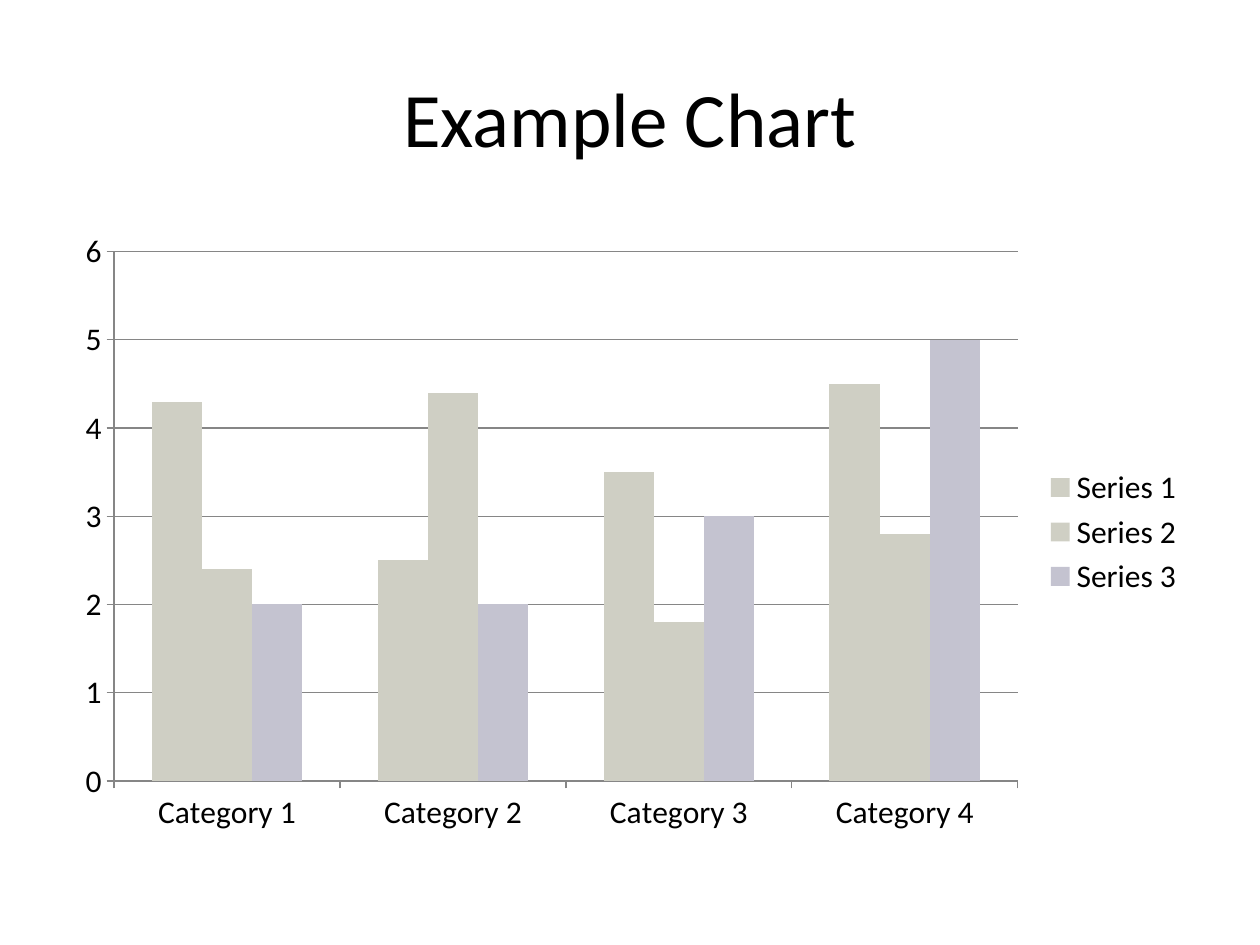
from pptx import Presentation
from pptx.chart.data import CategoryChartData
from pptx.dml.color import RGBColor
from pptx.enum.chart import XL_CHART_TYPE as ChartType, XL_LEGEND_POSITION as LegendPos
from pptx.enum.chart import XL_TICK_MARK as Tick
from pptx.enum.text import MSO_ANCHOR as Anchor, PP_ALIGN as Align
from pptx.util import Pt

# Content
TITLE = "Example Chart"
CATEGORIES = ["Category 1", "Category 2", "Category 3", "Category 4"]
SERIES = [
    ("Series 1", (4.3, 2.5, 3.5, 4.5), "CFCFC4"),
    ("Series 2", (2.4, 4.4, 1.8, 2.8), "CFCFC4"),
    ("Series 3", (2, 2, 3, 5), "C4C3D0"),
]

# Layout in px, 126 to the inch
SLIDE_W, SLIDE_H = 1260, 945
MARGIN = 63
TITLE_TOP, TITLE_H = 38, 157
CHART_TOP, CHART_H = 220, 624
FONT, BLACK, AXIS_GREY = "Calibri", "000000", "868686"


def px(length):
    return round(length * 914400 / 126)


def rgb(code):
    return RGBColor.from_string(code)


def set_font(font, size, color=BLACK):
    font.name, font.size = FONT, Pt(size)
    font.color.rgb = rgb(color)


def add_text(slide, text, box, size, align=Align.CENTER, anchor=Anchor.MIDDLE):
    frame = slide.shapes.add_textbox(*map(px, box)).text_frame
    frame.word_wrap = True
    frame.vertical_anchor = anchor
    paragraph = frame.paragraphs[0]
    paragraph.alignment = align
    run = paragraph.add_run()
    run.text = text
    set_font(run.font, size)


def style_line(line):
    line.color.rgb = rgb(AXIS_GREY)
    line.width = Pt(0.75)


def add_columns(slide, box):
    data = CategoryChartData()
    data.categories = CATEGORIES
    for name, values, _ in SERIES:
        data.add_series(name, values)
    chart = slide.shapes.add_chart(ChartType.COLUMN_CLUSTERED, *map(px, box), data).chart
    chart.has_title = False
    set_font(chart.font, 18)

    # Columns
    plot = chart.plots[0]
    plot.gap_width, plot.overlap = 150, 0
    plot.vary_by_categories = False
    for series, (_, _, color) in zip(plot.series, SERIES):
        series.format.fill.solid()
        series.format.fill.fore_color.rgb = rgb(color)
        series.invert_if_negative = False

    # Axes and gridlines
    for axis in (chart.category_axis, chart.value_axis):
        axis.major_tick_mark, axis.minor_tick_mark = Tick.OUTSIDE, Tick.NONE
        style_line(axis.format.line)
    scale = chart.value_axis
    scale.minimum_scale, scale.maximum_scale, scale.major_unit = 0, 6, 1
    scale.has_major_gridlines = True
    style_line(scale.major_gridlines.format.line)

    # Legend
    chart.has_legend = True
    chart.legend.position = LegendPos.RIGHT
    chart.legend.include_in_layout = False


prs = Presentation()
prs.slide_width, prs.slide_height = px(SLIDE_W), px(SLIDE_H)
slide = prs.slides.add_slide(prs.slide_layouts[6])
content_w = SLIDE_W - 2 * MARGIN
add_text(slide, TITLE, (MARGIN, TITLE_TOP, content_w, TITLE_H), size=44)
add_columns(slide, (MARGIN, CHART_TOP, content_w, CHART_H))
prs.save("out.pptx")
